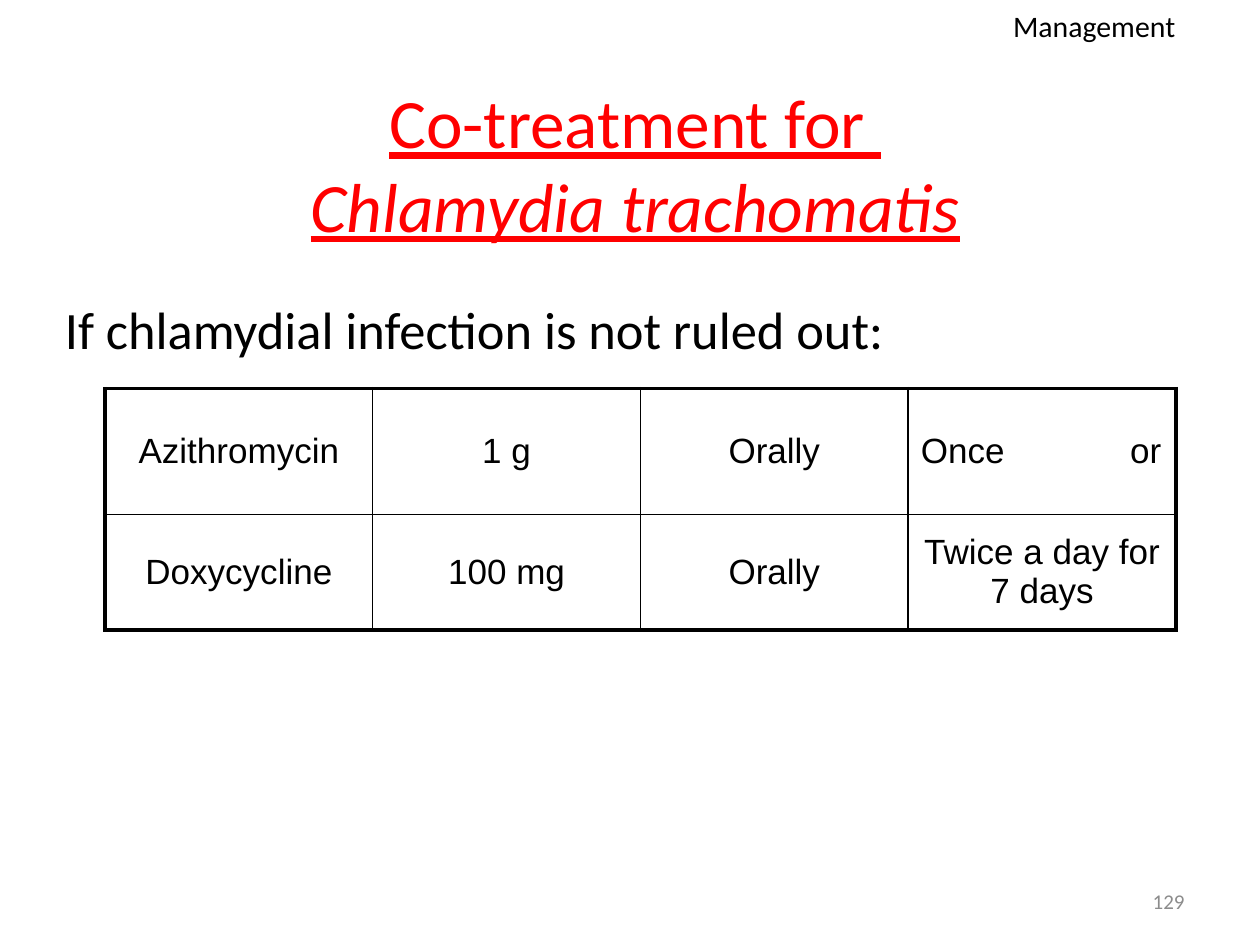
import pptx
import pptx.util
import pptx.dml.color
import pptx.enum.text
import pptx.oxml
import pptx.oxml.ns
import lxml.etree

COLORS = {"title": "FF0000", "text": "000000", "number": "8C8C8C", "border": "000000"}
ALIGN = pptx.enum.text.PP_ALIGN
ANCHOR = pptx.enum.text.MSO_ANCHOR


class Deck:
    """Style and current slide, placed on a grid of 120 columns by 90 rows."""

    def __init__(self):
        self.prs = pptx.Presentation()
        self.prs.slide_width = pptx.util.Inches(10)
        self.prs.slide_height = pptx.util.Inches(7.5)
        self.s = self.prs.slides.add_slide(self.prs.slide_layouts[6])

    def grid(self, *units):
        return [round(u * self.prs.slide_width / 120) for u in units]

    def style(self, p, size, color="text", font="Calibri", align=ALIGN.LEFT):
        p.alignment = align
        p.font.name = font
        p.font.size = pptx.util.Pt(size)
        p.font.color.rgb = pptx.dml.color.RGBColor.from_string(COLORS[color])

    def text(self, box, lines, size, color="text", align=ALIGN.LEFT,
             anchor=ANCHOR.TOP, wrap=False, underline=None):
        tf = self.s.shapes.add_textbox(*self.grid(*box)).text_frame
        tf.word_wrap = wrap
        tf.vertical_anchor = anchor
        p = tf.paragraphs[0]
        self.style(p, size, color, align=align)
        p.font.underline = underline
        for i, (line, italic) in enumerate(lines):
            if i:
                p.add_line_break()
            r = p.add_run()
            r.text = line
            r.font.italic = italic

    def borders(self, cell, widths):
        tc_pr = cell._tc.get_or_add_tcPr()
        for i, (side, width) in enumerate(zip("LRTB", widths)):
            tc_pr.insert(i, pptx.oxml.parse_xml(
                f'<a:ln{side} {pptx.oxml.ns.nsdecls("a")} w="{pptx.util.Pt(width)}">'
                f'<a:solidFill><a:srgbClr val="{COLORS["border"]}"/></a:solidFill></a:ln{side}>'))

    def right_tab(self, p, pos):
        p.alignment = ALIGN.LEFT
        tabs = lxml.etree.Element(pptx.oxml.ns.qn("a:tabLst"))
        lxml.etree.SubElement(tabs, pptx.oxml.ns.qn("a:tab"), pos=str(pos), algn="r")
        p._p.get_or_add_pPr().find(pptx.oxml.ns.qn("a:defRPr")).addprevious(tabs)

    def table(self, box, heights, rows, size, outer=2.25, inner=1):
        n, m = len(rows), len(rows[0])
        table = self.s.shapes.add_table(n, m, *self.grid(*box)).table
        table.first_row = table.horz_banding = False
        for i, (height, row) in enumerate(zip(self.grid(*heights), rows)):
            table.rows[i].height = height
            for j, value in enumerate(row):
                cell = table.cell(i, j)
                cell.vertical_anchor = ANCHOR.MIDDLE
                cell.fill.background()
                edges = (j == 0, j == m - 1, i == 0, i == n - 1)
                self.borders(cell, [outer if edge else inner for edge in edges])
                p = cell.text_frame.paragraphs[0]
                p.add_run().text = value
                self.style(p, size, font="Arial", align=ALIGN.CENTER)
                p.space_before = pptx.util.Pt(size * 0.2)
                if "\t" in value:
                    self.right_tab(p, pptx.util.Inches(1.91))


def main():
    deck = Deck()
    deck.text((86, 83.4, 28, 4.8), [("129", None)], 12, "number",
              ALIGN.RIGHT, ANCHOR.MIDDLE, wrap=True)
    deck.text((9, 8, 103, 15), [("Co-treatment for ", None), ("Chlamydia trachomatis", True)],
              39.6, "title", ALIGN.CENTER, ANCHOR.MIDDLE, wrap=True, underline=True)
    deck.table((10, 37, 102, 23), (12, 11), [
        ("Azithromycin", "1 g", "Orally", "Once\tor"),
        ("Doxycycline", "100 mg", "Orally", "Twice a day for 7 days"),
    ], 20)
    deck.text((95.3, 0.1, 18.2, 4.7), [("Management", None)], 17)
    deck.text((5, 27.7, 81, 7.2), [("If chlamydial infection is not ruled out:", None)], 30)
    deck.prs.save("out.pptx")


if __name__ == "__main__":
    main()
